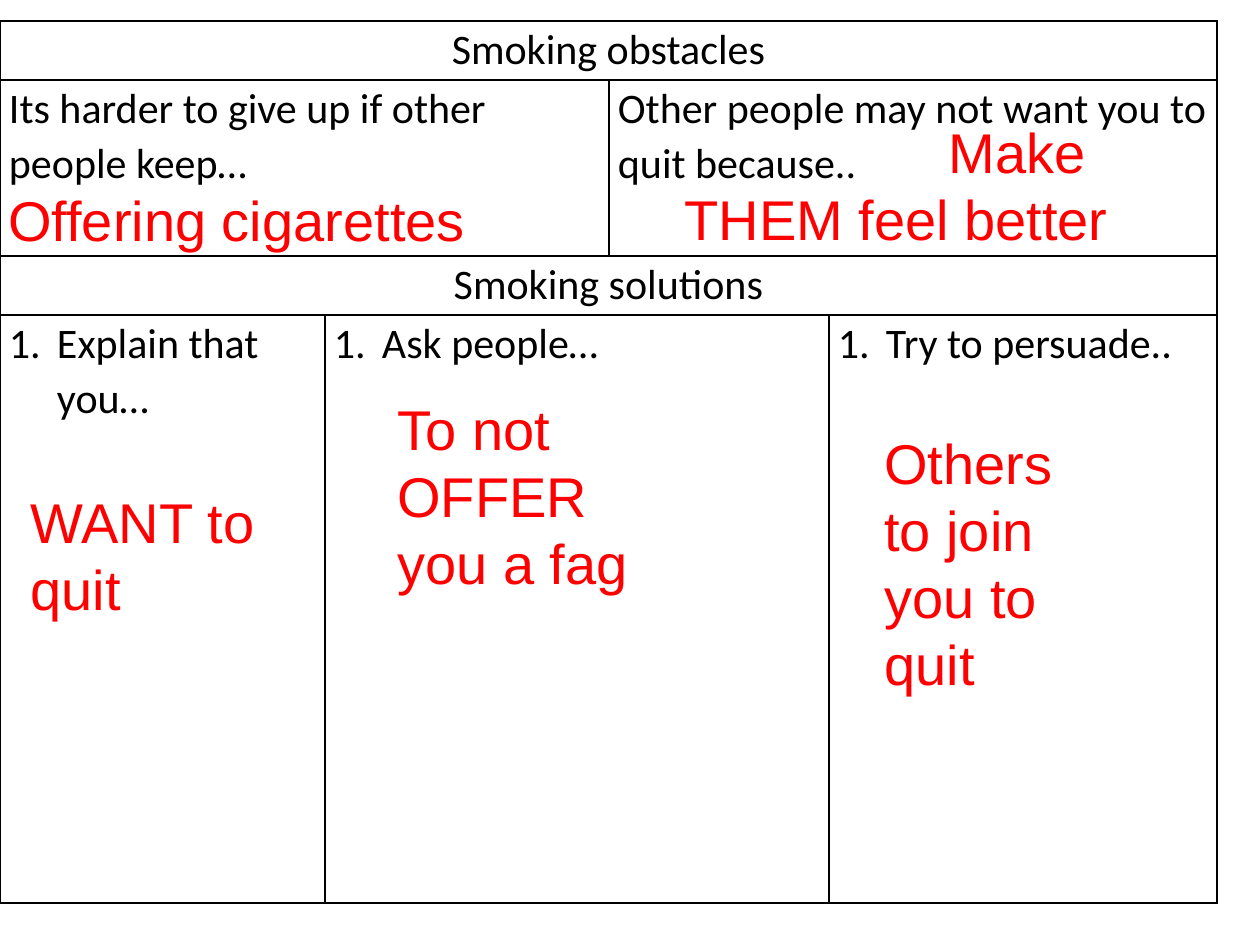
from dataclasses import dataclass

from lxml.etree import SubElement as Sub
from pptx import Presentation as Deck
from pptx.dml.color import RGBColor as Rgb
from pptx.enum.text import MSO_AUTO_SIZE as Auto, PP_ALIGN as Align
from pptx.oxml.ns import qn
from pptx.util import Emu, Pt

BLACK = Rgb(0, 0, 0)
RED = Rgb(255, 0, 0)
SCALE = 914400 / 126
COLS = (325, 284, 220, 388)
ROWS = (59, 176, 59, 588)
PAD = 9
HANG = 48


@dataclass(frozen=True)
class Entry:
    row: int
    col: int
    span: int
    text: str
    align: Align = Align.LEFT
    listed: bool = False


@dataclass(frozen=True)
class Note:
    left: int
    top: int
    width: int
    height: int
    text: str
    indent: int = 0
    right: int = 13


ENTRIES = (
    Entry(0, 0, 4, "Smoking obstacles", Align.CENTER),
    Entry(1, 0, 2, "Its harder to give up if other people keep…"),
    Entry(1, 2, 2, "Other people may not want you to quit because.."),
    Entry(2, 0, 4, "Smoking solutions", Align.CENTER),
    Entry(3, 0, 1, "Explain that you…", listed=True),
    Entry(3, 1, 2, "Ask people…", listed=True),
    Entry(3, 3, 1, "Try to persuade..", listed=True),
)
NOTES = (
    Note(-4, 179, 620, 81, "Offering cigarettes"),
    Note(672, 111, 546, 149, "Make THEM feel better", indent=264),
    Note(385, 388, 287, 217, "To not OFFER you a fag"),
    Note(18, 481, 287, 149, "WANT to quit"),
    Note(872, 422, 287, 217, "Others to join you to quit", right=48),
)


def px(size: int) -> Emu:
    return Emu(round(size * SCALE))


def write(frame, text: str, *, font: str, size: int, color: Rgb,
          align=Align.LEFT, space=None, left=0, indent=0, listed=False) -> None:
    para = frame.paragraphs[0]
    para.alignment = align
    para.line_spacing = space
    run = para.add_run()
    run.text = text
    run.font.name = font
    run.font.size = Pt(size)
    run.font.color.rgb = color
    props = para._p.get_or_add_pPr()
    props.set("marL", str(px(left)))
    props.set("indent", str(px(indent)))
    if listed:
        Sub(props, qn("a:buFont"), typeface="+mj-lt")
        Sub(props, qn("a:buAutoNum"), type="arabicPeriod")


def frame_cell(cell) -> None:
    props = cell._tc.get_or_add_tcPr()
    for side in ("lnL", "lnR", "lnT", "lnB"):
        line = Sub(props, qn(f"a:{side}"), w=str(Pt(1)))
        fill = Sub(line, qn("a:solidFill"))
        Sub(fill, qn("a:srgbClr"), val=str(BLACK))
    cell.fill.background()
    cell.margin_left = cell.margin_right = px(PAD)
    cell.margin_top = cell.margin_bottom = 0


def add_grid(slide) -> None:
    table = slide.shapes.add_table(
        len(ROWS), len(COLS), 0, px(21), px(sum(COLS)), px(sum(ROWS))).table
    table.first_row = table.horz_banding = False
    for col, width in zip(table.columns, COLS):
        col.width = px(width)
    for row, height in zip(table.rows, ROWS):
        row.height = px(height)
    for cell in table.iter_cells():
        frame_cell(cell)
    for item in ENTRIES:
        cell = table.cell(item.row, item.col)
        if item.span > 1:
            cell.merge(table.cell(item.row, item.col + item.span - 1))
        hang = HANG if item.listed else 0
        write(cell.text_frame, item.text, font="Calibri", size=24, color=BLACK,
              align=item.align, space=1.07, left=hang, indent=-hang,
              listed=item.listed)


def add_note(slide, note: Note) -> None:
    box = slide.shapes.add_textbox(
        px(note.left), px(note.top), px(note.width), px(note.height))
    frame = box.text_frame
    frame.word_wrap = True
    frame.auto_size = Auto.SHAPE_TO_FIT_TEXT
    frame.margin_right = px(note.right)
    write(frame, note.text, font="Arial", size=32, color=RED, indent=note.indent)


def main() -> None:
    deck = Deck()
    deck.slide_width, deck.slide_height = px(1260), px(945)
    slide = deck.slides.add_slide(deck.slide_layouts[6])
    add_grid(slide)
    for note in NOTES:
        add_note(slide, note)
    deck.save("out.pptx")


if __name__ == "__main__":
    main()
